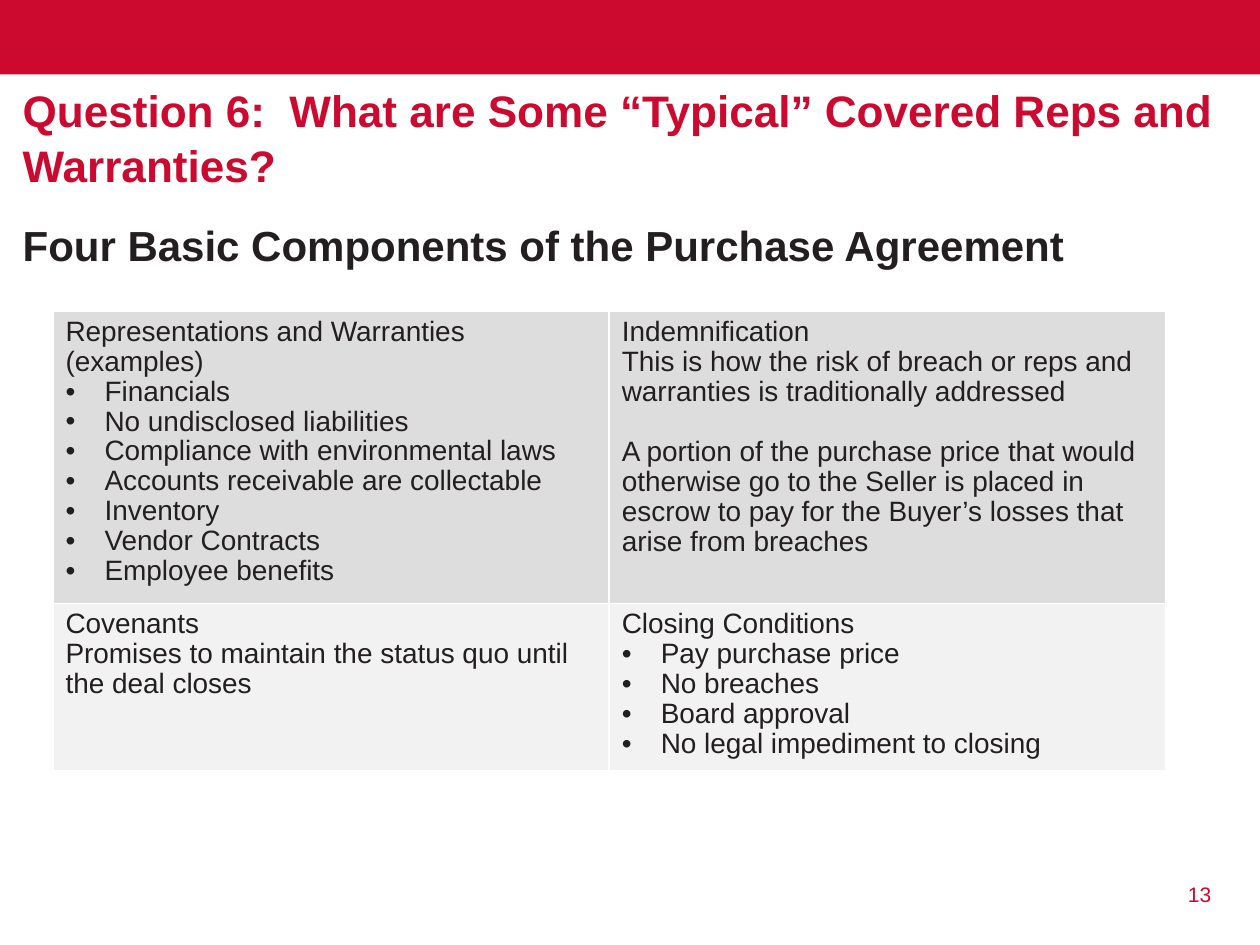
from lxml.etree import SubElement
from pptx import Presentation
from pptx.dml.color import RGBColor
from pptx.enum.shapes import MSO_SHAPE
from pptx.enum.text import MSO_ANCHOR, MSO_AUTO_SIZE, PP_ALIGN
from pptx.oxml.ns import qn
from pptx.util import Inches, Pt

RED = RGBColor(0xCC, 0x09, 0x2F)
INK = RGBColor(0x23, 0x1F, 0x20)
MID_GREY = RGBColor(0xDD, 0xDD, 0xDD)
PALE_GREY = RGBColor(0xF2, 0xF2, 0xF2)
WHITE = RGBColor(0xFF, 0xFF, 0xFF)

COMPONENTS = [
    [
        (["Representations and Warranties (examples)"],
         ["Financials", "No undisclosed liabilities", "Compliance with environmental laws",
          "Accounts receivable are collectable", "Inventory", "Vendor Contracts",
          "Employee benefits"]),
        (["Indemnification",
          "This is how the risk of breach or reps and warranties is traditionally addressed",
          "A portion of the purchase price that would otherwise go to the Seller is placed in "
          "escrow to pay for the Buyer’s losses that arise from breaches"], []),
    ],
    [
        (["Covenants", "Promises to maintain the status quo until the deal closes"], []),
        (["Closing Conditions"],
         ["Pay purchase price", "No breaches", "Board approval",
          "No legal impediment to closing"]),
    ],
]
ROW_FILLS = [MID_GREY, PALE_GREY]
ROW_HEIGHTS = [2.32, 1.33]


def place(shape, box):
    """Move a shape to a box of left, top, width and height in inches."""
    shape.left, shape.top, shape.width, shape.height = map(Inches, box)


def add_span(para, text, size, color, bold=False):
    """Add one formatted run to a paragraph."""
    span = para.add_run()
    span.text = text
    span.font.name = "Arial"
    span.font.size = Pt(size)
    span.font.bold = bold
    span.font.color.rgb = color


def set_bullet(para, indent=None):
    """Give a paragraph a hanging bullet, or none when there is no indent."""
    properties = para._p.get_or_add_pPr()
    hang = Inches(indent or 0)
    properties.set("marL", str(hang))
    properties.set("indent", str(-hang))
    if indent:
        SubElement(properties, qn("a:buFont"), typeface="Arial")
        SubElement(properties, qn("a:buChar"), char="•")
    else:
        SubElement(properties, qn("a:buNone"))


def set_borders(cell, color, width):
    """Draw all four edges of a table cell."""
    properties = cell._tc.get_or_add_tcPr()
    for edge in ("lnL", "lnR", "lnT", "lnB"):
        line = SubElement(properties, qn(f"a:{edge}"), w=str(Pt(width)))
        fill = SubElement(line, qn("a:solidFill"))
        SubElement(fill, qn("a:srgbClr"), val=str(color))


def add_banner(page, box):
    """Draw the red band across the top."""
    banner = page.shapes.add_shape(MSO_SHAPE.RECTANGLE, *map(Inches, box))
    banner.shadow.inherit = False
    banner.fill.solid()
    banner.fill.fore_color.rgb = RED
    banner.line.fill.background()


def fill_placeholder(holder, box, text, size, color):
    """Place a bold heading in a template placeholder."""
    place(holder, box)
    frame = holder.text_frame
    frame.auto_size = MSO_AUTO_SIZE.NONE
    frame.vertical_anchor = MSO_ANCHOR.TOP
    para = frame.paragraphs[0]
    para.alignment = PP_ALIGN.LEFT
    para.space_before = Pt(0)
    para.line_spacing = 1.05
    set_bullet(para)
    add_span(para, text, size, color, bold=True)


def fill_cell(cell, statements, bullets, color):
    """Write the statements and bullets of one component."""
    set_borders(cell, WHITE, 1)
    cell.fill.solid()
    cell.fill.fore_color.rgb = color
    frame = cell.text_frame
    for index, text in enumerate(statements + bullets):
        para = frame.add_paragraph() if index else frame.paragraphs[0]
        para.line_spacing = 0.96
        if index >= len(statements):
            set_bullet(para, 0.31)
        elif index == 2:
            para.space_before = Pt(17.7)
        add_span(para, text, 16, INK)


def add_components(page, box):
    """Build the two by two table of agreement components."""
    table = page.shapes.add_table(2, 2, *map(Inches, box)).table
    for row, height in zip(table.rows, ROW_HEIGHTS):
        row.height = Inches(height)
    for r, (contents, color) in enumerate(zip(COMPONENTS, ROW_FILLS)):
        for c, (statements, bullets) in enumerate(contents):
            fill_cell(table.cell(r, c), statements, bullets, color)


def add_page_number(page, box):
    """Write the page number in the lower right corner."""
    frame = page.shapes.add_textbox(*map(Inches, box)).text_frame
    frame.word_wrap = True
    add_span(frame.paragraphs[0], "13", 12, RED)


def main():
    """Build and save the deck."""
    deck = Presentation()
    deck.slide_width, deck.slide_height = Inches(10), Inches(7.5)
    page = deck.slides.add_slide(deck.slide_layouts[1])
    add_banner(page, (0, 0, 10, 0.59))
    fill_placeholder(page.shapes.title, (0.08, 0.59, 9.83, 0.96),
                     "Question 6:  What are Some “Typical” Covered Reps and Warranties?",
                     25.2, RED)
    fill_placeholder(page.placeholders[1], (0.08, 1.67, 9.83, 5.17),
                     "Four Basic Components of the Purchase Agreement", 24, INK)
    add_components(page, (0.42, 2.47, 8.83, sum(ROW_HEIGHTS)))
    add_page_number(page, (9.33, 6.95, 0.58, 0.4))
    deck.save("out.pptx")


if __name__ == "__main__":
    main()
